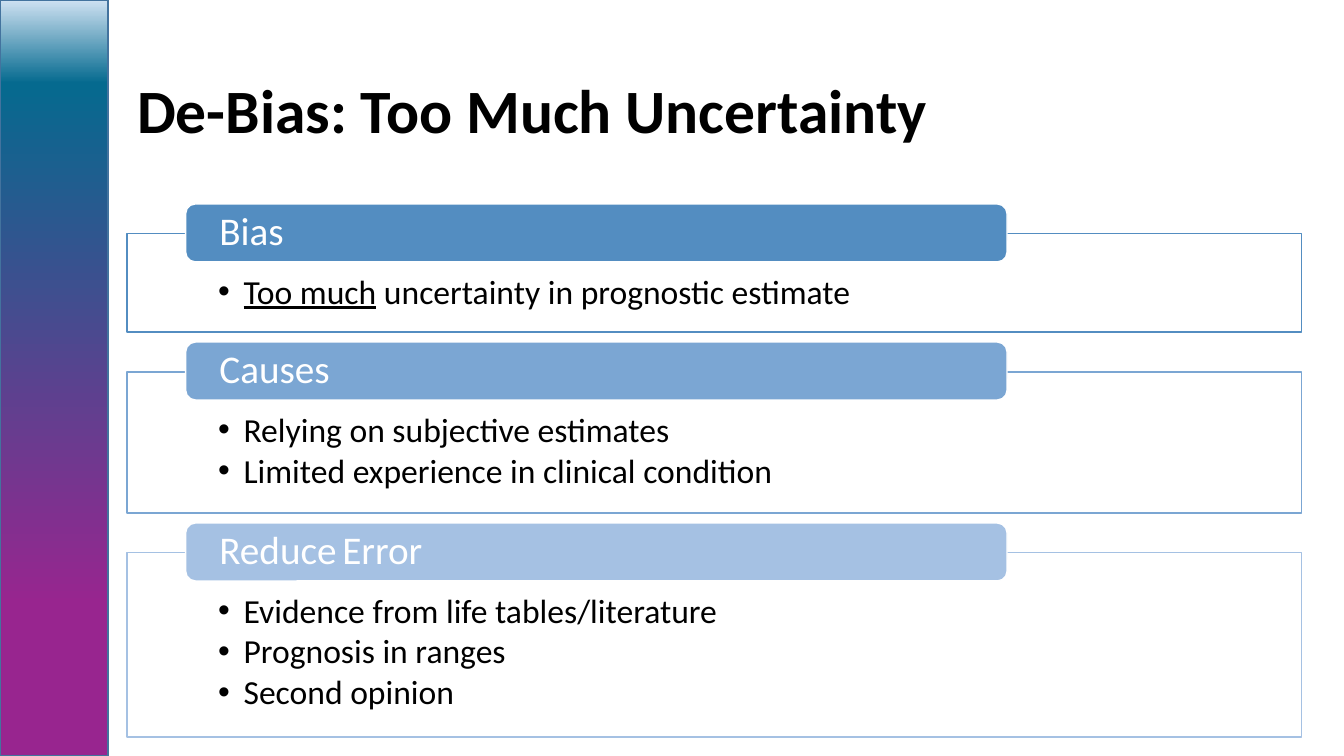
from dataclasses import dataclass

from lxml.etree import SubElement
from pptx import Presentation
from pptx.dml.color import RGBColor
from pptx.enum.shapes import MSO_SHAPE as Shape
from pptx.enum.text import MSO_ANCHOR as Anchor, PP_ALIGN as Align
from pptx.oxml import parse_xml
from pptx.oxml.ns import nsdecls, qn
from pptx.util import Cm, Pt

TITLE = "De-Bias: Too Much Uncertainty"

# Each text is a list of (words, font settings that differ from the paragraph).
SECTIONS = [
    ([("Bias", {})],
     [[("Too much", {"underline": True}), (" uncertainty in prognostic estimate", {})]]),
    ([("Causes", {})],
     [[("Relying on subjective estimates", {})],
      [("Limited experience in clinical condition", {})]]),
    ([("Reduce", {}), (" ", {"size": Pt(18)}), ("Error", {})],
     [[("Evidence from life tables/literature", {})],
      [("Prognosis in ranges", {})],
      [("Second opinion", {})]]),
]


@dataclass(frozen=True)
class Theme:
    font: str = "Calibri"
    title_size: int = 44
    heading_size: int = 28
    bullet_size: int = 24
    ink: str = "000000"
    paper: str = "FFFFFF"
    accents: tuple = ("538DC1", "7BA6D3", "A5C1E3")
    sidebar_line: str = "43739E"
    sidebar_stops: tuple = ((20, "98258F"), (89, "056A8F"), (100, "CEE1F2"))


THEME = Theme()

# Lengths in centimetres
SLIDE_W, SLIDE_H = 33.87, 19.05
SIDEBAR_W = 2.72
PANEL_LEFT, PANEL_TOP, PANEL_W = 3.2, 5.89, 29.6
PANEL_BASE_H, BULLET_H, PANEL_GAP = 1.4, 1.08, 1.0
HEADING_LEFT, HEADING_W, HEADING_H = 4.68, 20.7, 1.46
HEADING_RISE = 0.75
BULLET_INDENT = 0.64


def rgb(colour):
    return RGBColor.from_string(colour)


def add_box(slide, preset, left, top, width, height, fill, line):
    box = slide.shapes.add_shape(preset, Cm(left), Cm(top), Cm(width), Cm(height))
    box.shadow.inherit = False
    box.fill.solid()
    box.fill.fore_color.rgb = rgb(fill)
    box.line.color.rgb = rgb(line)
    box.line.width = Pt(1)
    return box


def set_insets(frame, left, top, right, bottom):
    frame.margin_left, frame.margin_top = Cm(left), Cm(top)
    frame.margin_right, frame.margin_bottom = Cm(right), Cm(bottom)


def write(paragraph, parts, size, colour, bold=False):
    paragraph.alignment = Align.LEFT
    paragraph.line_spacing = 0.9
    font = paragraph.font
    font.name, font.size, font.bold = THEME.font, Pt(size), bold
    font.color.rgb = rgb(colour)
    for words, settings in parts:
        run = paragraph.add_run()
        run.text = words
        for setting, value in settings.items():
            setattr(run.font, setting, value)


def add_bullet_mark(paragraph):
    props = paragraph._p.get_or_add_pPr()
    props.set("marL", str(Cm(BULLET_INDENT)))
    props.set("indent", str(-Cm(BULLET_INDENT)))
    SubElement(props, qn("a:buFont"), typeface="Arial")
    SubElement(props, qn("a:buChar"), char="•")


def add_sidebar(slide):
    sidebar = add_box(slide, Shape.RECTANGLE, 0, 0, SIDEBAR_W, SLIDE_H,
                      THEME.paper, THEME.sidebar_line)
    stops = "".join(f'<a:gs pos="{percent * 1000}"><a:srgbClr val="{colour}"/></a:gs>'
                    for percent, colour in THEME.sidebar_stops)
    gradient = parse_xml(f'<a:gradFill {nsdecls("a")}><a:gsLst>{stops}</a:gsLst>'
                         '<a:lin ang="16200000" scaled="0"/></a:gradFill>')
    props = sidebar._element.spPr
    props.replace(props.find(qn("a:solidFill")), gradient)


def add_title(slide):
    title = slide.shapes.title
    title.left, title.top, title.width, title.height = Cm(3.2), Cm(1.02), Cm(29.57), Cm(3.68)
    title.text_frame.vertical_anchor = Anchor.MIDDLE
    write(title.text_frame.paragraphs[0], [(TITLE, {})],
          THEME.title_size, THEME.ink, bold=True)


def add_panel(slide, top, height, bullets, accent):
    panel = add_box(slide, Shape.RECTANGLE, PANEL_LEFT, top, PANEL_W, height,
                    THEME.paper, accent)
    frame = panel.text_frame
    frame.vertical_anchor = Anchor.TOP
    set_insets(frame, 2.3, 1.04, 2.3, 0.48)
    for i, parts in enumerate(bullets):
        paragraph = frame.add_paragraph() if i else frame.paragraphs[0]
        add_bullet_mark(paragraph)
        paragraph.space_after = Pt(3.3)
        write(paragraph, parts, THEME.bullet_size, THEME.ink)


def add_heading(slide, top, parts, accent):
    heading = add_box(slide, Shape.ROUNDED_RECTANGLE, HEADING_LEFT, top,
                      HEADING_W, HEADING_H, accent, THEME.paper)
    frame = heading.text_frame
    frame.vertical_anchor = Anchor.MIDDLE
    # The preset adds its own corner inset to these margins.
    set_insets(frame, 0.78, 0, 0.78, 0)
    write(frame.paragraphs[0], parts, THEME.heading_size, THEME.paper)


def main():
    deck = Presentation()
    deck.slide_width, deck.slide_height = Cm(SLIDE_W), Cm(SLIDE_H)
    slide = deck.slides.add_slide(deck.slide_layouts.get_by_name("Title Only"))
    add_sidebar(slide)
    add_title(slide)
    top = PANEL_TOP
    for (heading, bullets), accent in zip(SECTIONS, THEME.accents):
        height = PANEL_BASE_H + BULLET_H * len(bullets)
        add_panel(slide, top, height, bullets, accent)
        add_heading(slide, top - HEADING_RISE, heading, accent)
        top += height + PANEL_GAP
    deck.save("out.pptx")


if __name__ == "__main__":
    main()
